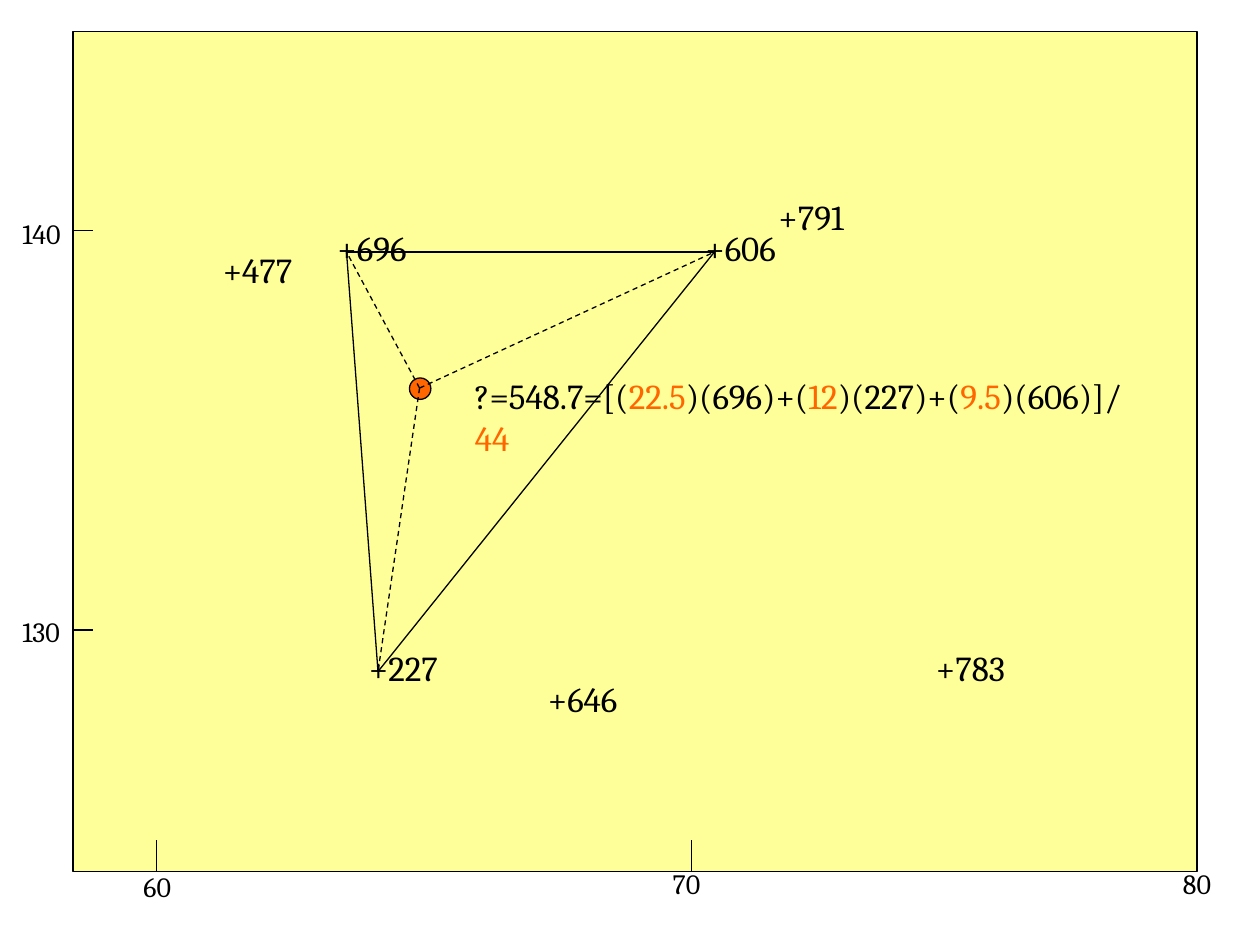
from dataclasses import dataclass
from itertools import combinations

from pptx import Presentation
from pptx.dml.color import RGBColor
from pptx.enum import dml, shapes, text
from pptx.oxml import ns
from pptx.util import Inches, Pt
from lxml import etree


@dataclass(frozen=True)
class Theme:
    """Colours, font and sizes of the map."""
    ink: RGBColor = RGBColor(0, 0, 0)
    accent: RGBColor = RGBColor(0xFF, 0x66, 0x00)
    field: RGBColor = RGBColor(0xFF, 0xFF, 0x99)
    font: str = "Cambria"
    axis_size: Pt = Pt(16)
    value_size: Pt = Pt(20)
    line_width: Pt = Pt(0.75)


THEME = Theme()
LEFT, TOP, WIDTH, HEIGHT = 0.58, 0.25, 8.92, 6.67
BOTTOM = TOP + HEIGHT
TARGET = (3.33, 3.08)
CORNERS = [(2.75, 2), (5.67, 2), (3, 5.33)]
Y_TICKS = [("140", 1.83, 1.67), ("130", 5, 4.83)]
X_TICKS = [("60", 1.24, 1.04, 6.85), ("70", 5.49, 5.24, 6.83)]
VALUES = [
    ("+477", 1.67, 1.92), ("+696", 2.58, 1.75), ("+227", 2.83, 5.08),
    ("+646", 4.25, 5.33), ("+606", 5.5, 1.75), ("+791", 6.08, 1.5),
    ("+783", 7.33, 5.08),
]
FORMULA = ["?=548.7=[(", "22.5", ")(696)+(", "12", ")(227)+(", "9.5", ")(606)]/", "44"]


def add_figure(page, kind, place, fill):
    """Add a filled preset shape with a thin outline."""
    shape = page.shapes.add_shape(kind, *map(Inches, place))
    shape.shadow.inherit = False
    shape.fill.solid()
    shape.fill.fore_color.rgb = fill
    shape.line.color.rgb = THEME.ink
    shape.line.width = THEME.line_width


def add_line(page, start, end, dashed=False):
    """Add a thin straight line, dashed on request."""
    line = page.shapes.add_connector(
        shapes.MSO_CONNECTOR.STRAIGHT, *map(Inches, (*start, *end)))
    line.line.color.rgb = THEME.ink
    line.line.width = THEME.line_width
    if dashed:
        line.line.dash_style = dml.MSO_LINE.DASH
    etree.SubElement(line._element.spPr, ns.qn("a:effectLst"))


def add_text(page, place, spans, size, wrap=False):
    """Add one paragraph whose every second run is accented."""
    box = page.shapes.add_textbox(*map(Inches, place))
    frame = box.text_frame
    frame.word_wrap = wrap
    frame.auto_size = text.MSO_AUTO_SIZE.SHAPE_TO_FIT_TEXT
    para = frame.paragraphs[0]
    for index, words in enumerate(spans):
        span = para.add_run()
        span.text = words
        span.font.name = THEME.font
        span.font.size = size
        span.font.color.rgb = THEME.accent if index % 2 else THEME.ink


def add_axes(page):
    """Add the tick marks and their labels."""
    for label, y, label_top in Y_TICKS:
        add_line(page, (LEFT, y), (0.74, y))
        add_text(page, (0.08, label_top, 0.53, 0.37), [label], THEME.axis_size)
    for label, x, label_left, label_top in X_TICKS:
        add_line(page, (x, BOTTOM), (x, BOTTOM - 0.25))
        add_text(page, (label_left, label_top, 0.42, 0.37), [label], THEME.axis_size)
    add_text(page, (9.29, 6.83, 0.42, 0.37), ["80"], THEME.axis_size)


def main():
    """Build the interpolation map and save it."""
    deck = Presentation()
    deck.slide_width, deck.slide_height = Inches(10), Inches(7.5)
    page = deck.slides.add_slide(deck.slide_layouts[6])
    add_figure(page, shapes.MSO_SHAPE.RECTANGLE, (LEFT, TOP, WIDTH, HEIGHT), THEME.field)
    add_figure(page, shapes.MSO_SHAPE.OVAL, (3.25, 3, 0.17, 0.17), THEME.accent)
    add_axes(page)
    for label, left, top in VALUES:
        add_text(page, (left, top, 0.77, 0.43), [label], THEME.value_size)
    add_text(page, (3.67, 2.92, 5.5, 0.76), FORMULA, THEME.value_size, wrap=True)
    for start, end in combinations(CORNERS, 2):
        add_line(page, start, end)
    for corner in CORNERS:
        add_line(page, TARGET, corner, dashed=True)
    deck.save("out.pptx")


if __name__ == "__main__":
    main()
